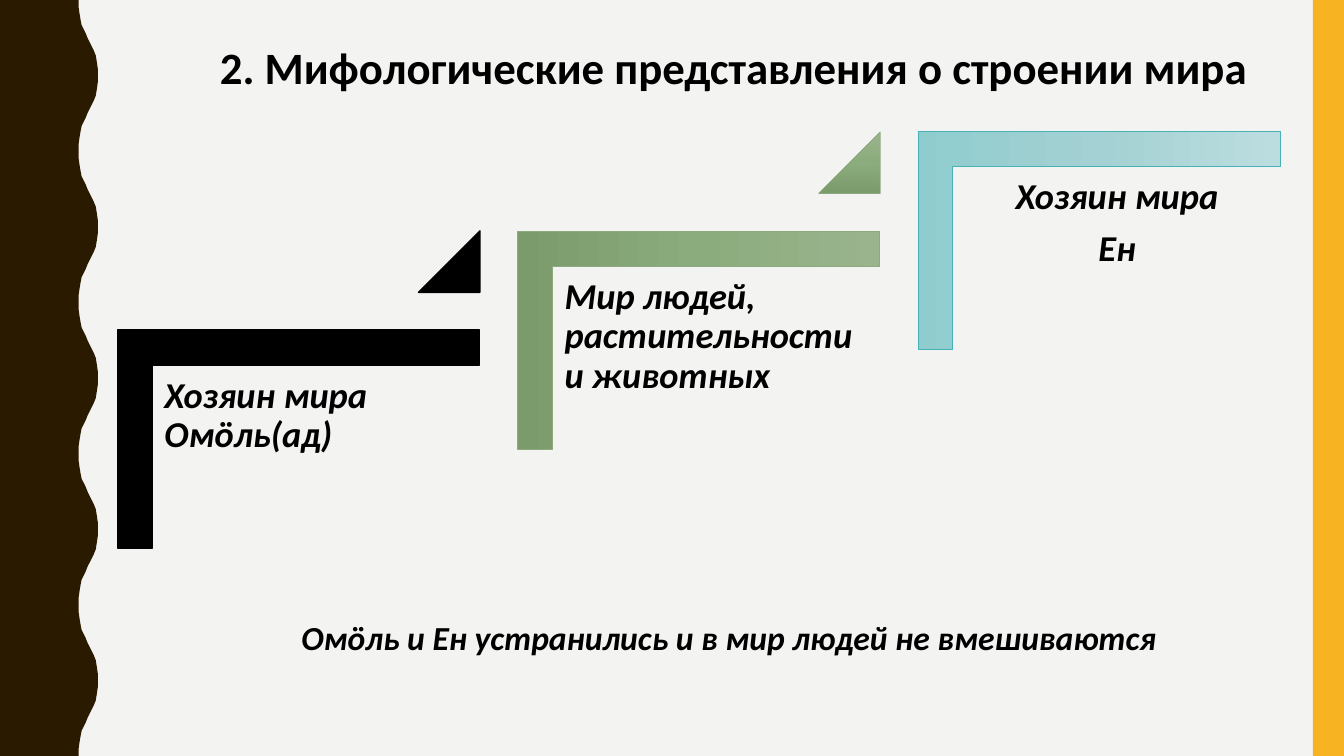
from copy import deepcopy

from pptx import Presentation
from pptx import util as u
from pptx.dml.color import RGBColor
from pptx.enum import shapes, text

PX = 9144
KIND = shapes.MSO_SHAPE
ALIGN = text.PP_ALIGN
GREEN = ["9AB48E", "8BAC7C", "7B9B6C"]
TEAL = ["BCDDDF", "A4D1D3", "90CCCE"]
STEPS = [
    (["Хозяин мира Омöль(ад)"], ALIGN.LEFT, ["000000"], "000000", 1),
    (["Мир людей, растительности и животных"], ALIGN.LEFT, GREEN, "8CAA7E", 0.5),
    (["Хозяин мира", "Ен"], ALIGN.CENTER, TEAL, "46B2B5", 0.5),
]


def color(code):
    return RGBColor.from_string(code)


def paint(shape, tones, edge=None, width=0):
    shape.shadow.inherit = False
    fill = shape.fill
    if len(tones) == 1:
        fill.solid()
        fill.fore_color.rgb = color(tones[0])
    else:
        fill.gradient()
        fill.gradient_angle = 270
        last = shape._element.xpath(".//a:gs")[-1]
        last.addprevious(deepcopy(last))
        for i, (stop, tone) in enumerate(zip(fill.gradient_stops, tones)):
            stop.position = i / (len(tones) - 1)
            stop.color.rgb = color(tone)
    if edge:
        shape.line.color.rgb = color(edge)
        shape.line.width = u.Pt(width)
    else:
        shape.line.fill.background()


def block(slide, kind, *spot):
    return slide.shapes.add_shape(kind, *[n * PX for n in spot])


def label(slide, spot, lines, size, align=ALIGN.CENTER, italic=True, step=False):
    frame = slide.shapes.add_textbox(*[n * PX for n in spot]).text_frame
    frame.word_wrap = True
    if step:
        frame.margin_left = frame.margin_right = 11 * PX
        frame.margin_top = frame.margin_bottom = 11 * PX
    else:
        frame.auto_size = text.MSO_AUTO_SIZE.SHAPE_TO_FIT_TEXT
    for i, line in enumerate(lines):
        para = frame.add_paragraph() if i else frame.paragraphs[0]
        para.alignment = align
        if step:
            para.line_spacing = 0.9
            para.space_after = u.Pt(9)
        run = para.add_run()
        run.text = line
        font = run.font
        font.name = "Calibri"
        font.size = u.Pt(size)
        font.bold = True
        font.italic = italic
        font.color.rgb = color("000000")


def wave(slide):
    rise = [(78, 0), (78, 7), (79, 14), (80, 20), (81, 25), (83, 29), (85, 33),
            (87, 38), (89, 42), (91, 46), (93, 50), (95, 55), (96, 61), (97, 68)]
    fall = [(x, 150 - y) for x, y in reversed(rise)]
    crest = rise + [(97, 75)] + fall
    edge = [(x, y + 150 * i) for i in range(5) for x, y in crest]
    form = slide.shapes.build_freeform(0, 0, scale=PX)
    form.add_line_segments(edge + [(0, 750)], close=True)
    paint(form.convert_to_shape(), ["2A1A00"])


def stair(slide, i, lines, align, tones, edge, width):
    over, up = 397 * i, 197 * i // 2
    bend = block(slide, KIND.CORNER, 188 + over, 256 - up, 216, 359)
    bend.rotation = 90
    bend.adjustments[0] = bend.adjustments[1] = 0.16
    paint(bend, tones, edge, width)
    label(slide, (152 + over, 363 - up, 324, 284), lines, 26, align, step=True)
    if i < len(STEPS) - 1:
        peak = block(slide, KIND.ISOSCELES_TRIANGLE, 415 + over, 229 - up, 61, 61)
        peak.adjustments[0] = 1
        paint(peak, tones, edge, width)


def main():
    deck = Presentation()
    deck.slide_width, deck.slide_height = u.Inches(13.33), u.Inches(7.5)
    slide = deck.slides.add_slide(deck.slide_layouts[6])
    back = slide.background.fill
    back.solid()
    back.fore_color.rgb = color("F3F3F2")
    wave(slide)
    paint(block(slide, KIND.RECTANGLE, 1302, 0, 31, 750), ["F8B323"])
    label(slide, (154, 34, 1148, 118),
          ["2. Мифологические представления о строении мира"], 32, italic=False)
    for i, step in enumerate(STEPS):
        stair(slide, i, *step)
    label(slide, (175, 607, 1096, 91),
          ["Омöль и Ен устранились и в мир людей не вмешиваются"], 24)
    deck.save("out.pptx")


if __name__ == "__main__":
    main()
